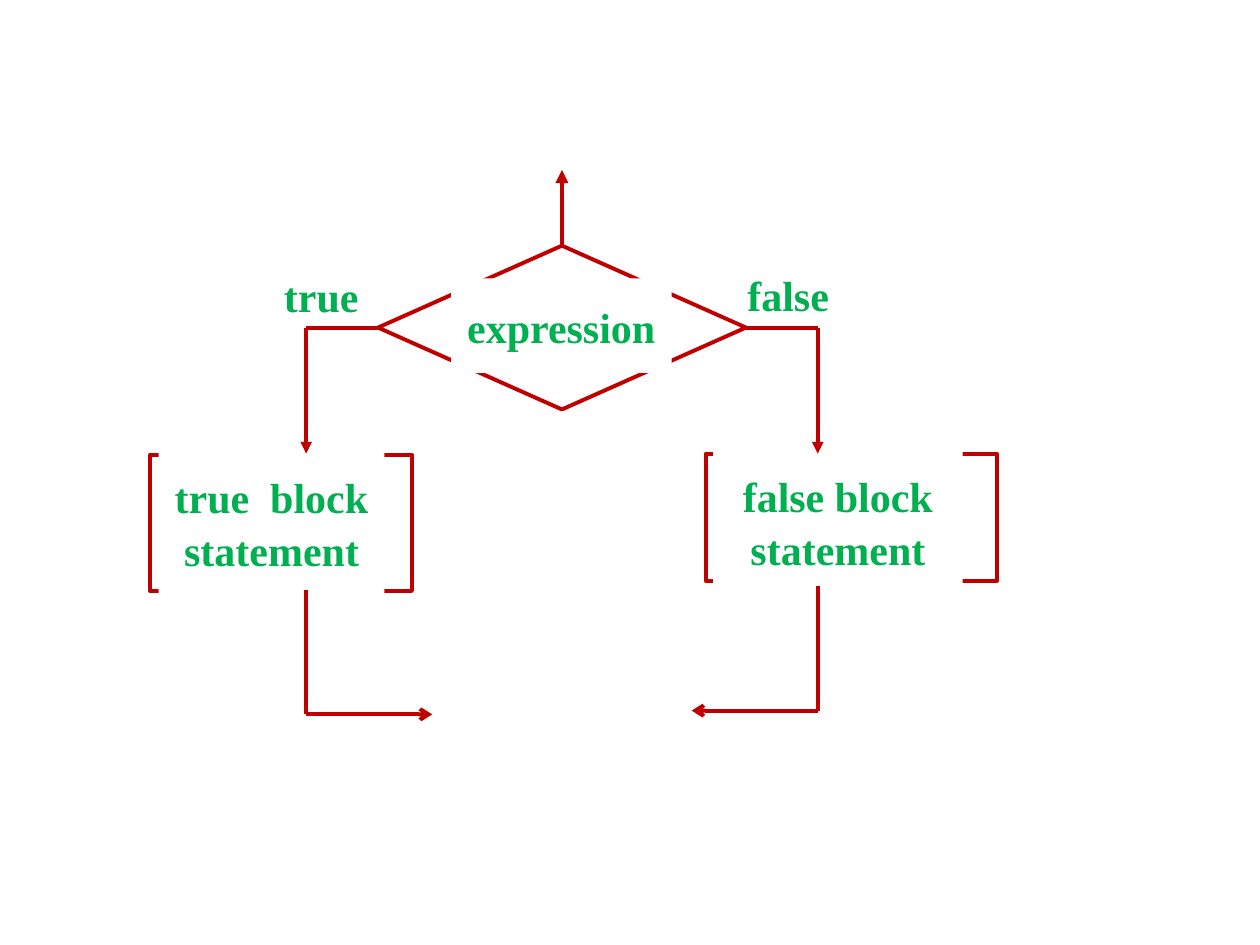
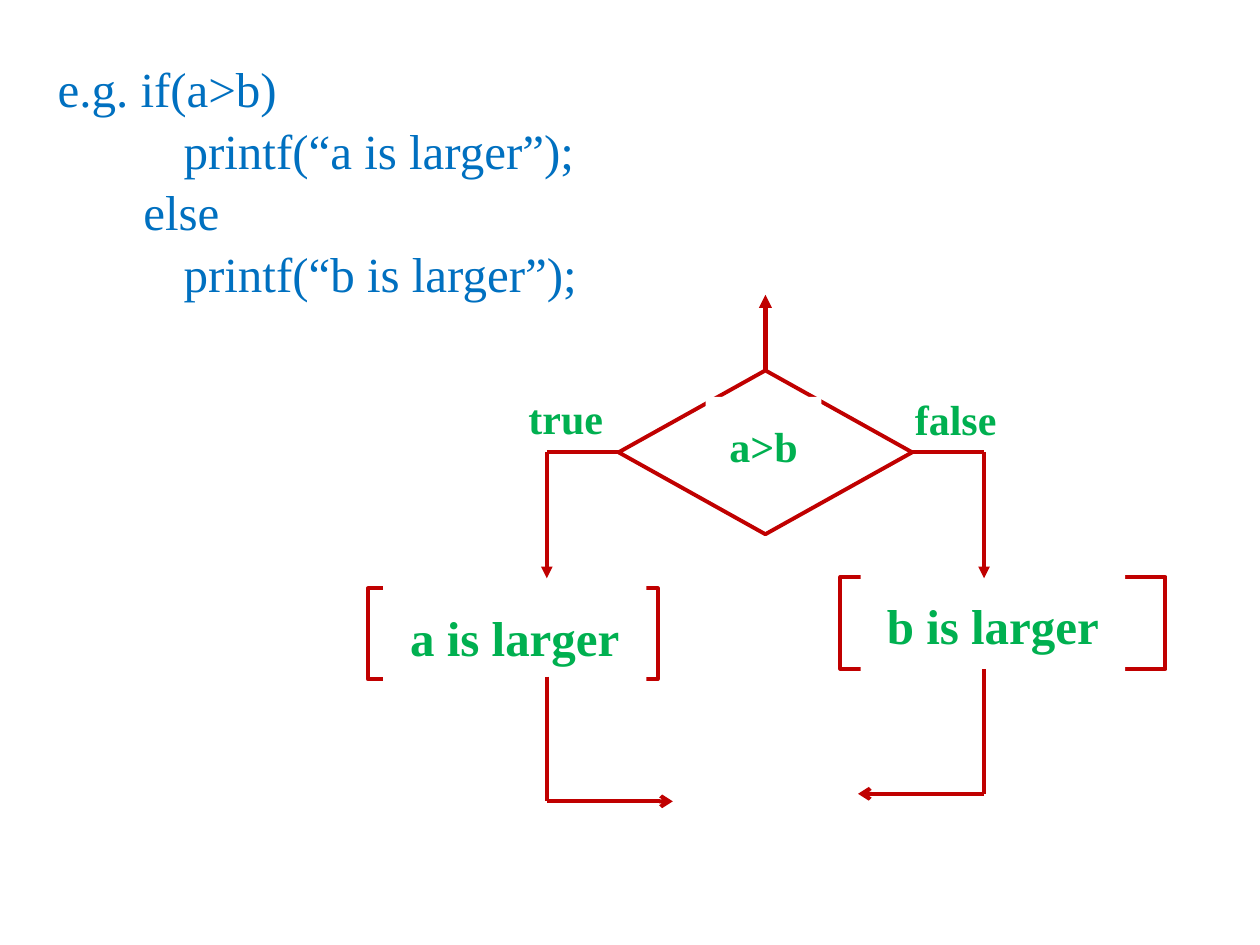
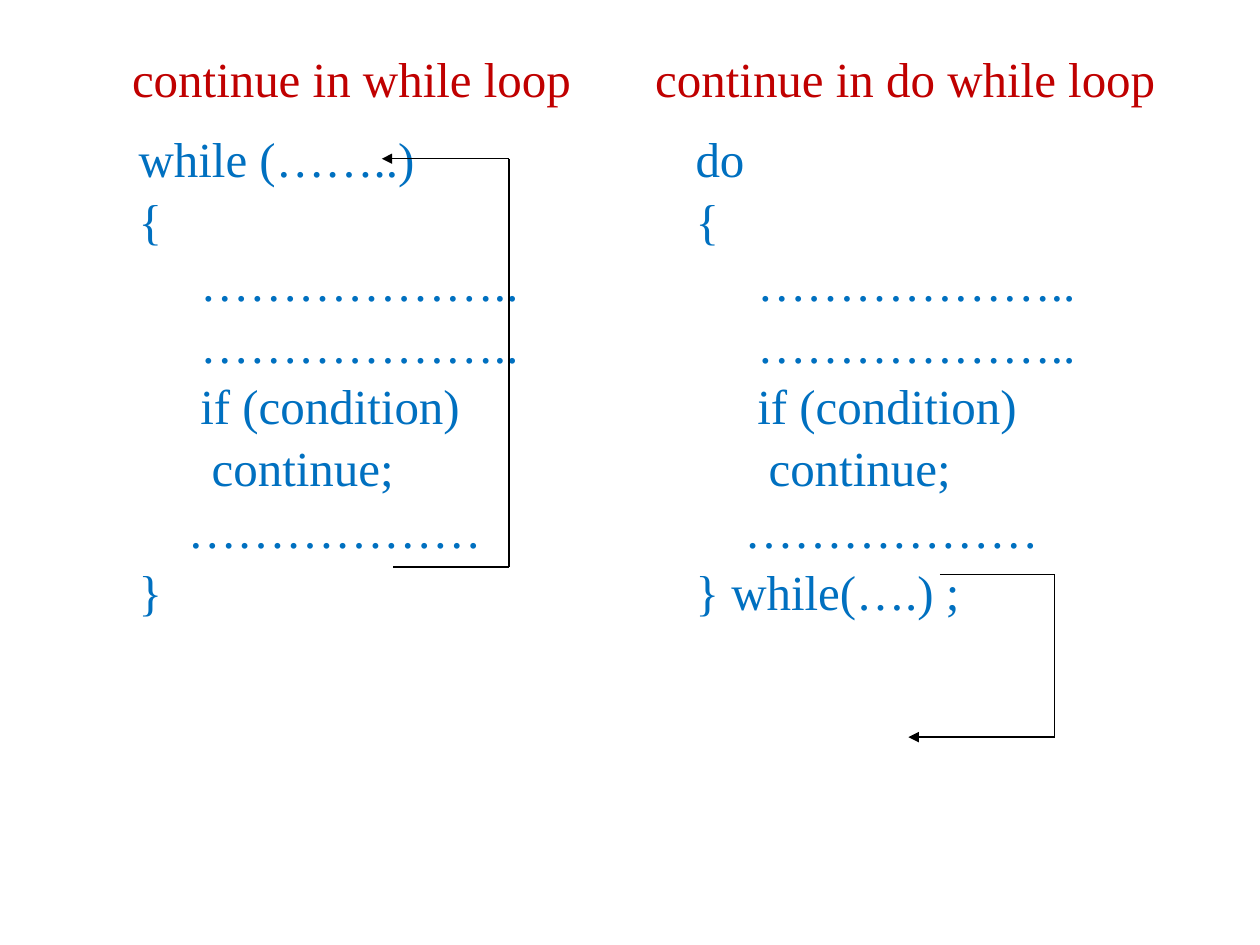
from lxml.etree import SubElement
from pptx import Presentation
from pptx.dml.color import RGBColor
from pptx.enum.shapes import MSO_CONNECTOR as Connector, MSO_SHAPE as Shape
from pptx.enum.text import MSO_ANCHOR as Anchor, MSO_AUTO_SIZE as AutoSize, PP_ALIGN as Align
from pptx.oxml.ns import qn
from pptx.util import Inches, Pt

COLUMNS, ROWS = 100, 75
FONT = "Times New Roman"
RED, GREEN, BLUE, BLACK, WHITE = "C00000", "00B050", "0070C0", "000000", "FFFFFF"
BLANK, COMPARISON = 6, 4
STEP = 10
SIDE_GAP = 5.7


def color(value):
    return RGBColor.from_string(value)


def write(frame, lines, size=24, fill=GREEN, bold=False, align=Align.CENTER,
          anchor=Anchor.MIDDLE, wrap=True, left_inset=0.1):
    frame.word_wrap = wrap
    frame.auto_size = AutoSize.NONE
    frame.vertical_anchor = anchor
    frame.margin_left, frame.margin_right = Inches(left_inset), Inches(0.1)
    frame.margin_top = frame.margin_bottom = Inches(0.05)
    for number, line in enumerate(lines):
        indent, words = line if isinstance(line, tuple) else (0, line)
        paragraph = frame.add_paragraph() if number else frame.paragraphs[0]
        paragraph.alignment = align
        paragraph.line_spacing = 1.05
        paragraph.space_before = paragraph.space_after = Pt(0)
        properties = paragraph._p.get_or_add_pPr()
        properties.set("marL", str(Inches(indent)))
        properties.set("indent", "0")
        SubElement(properties, qn("a:buNone"))
        run = paragraph.add_run()
        run.text = words
        run.font.name, run.font.size, run.font.bold = FONT, Pt(size), bold
        run.font.color.rgb = color(fill)


class Deck:
    """Holds the deck's style and current slide, and draws on a 100 by 75 grid."""

    def __init__(self):
        self.show = Presentation()
        self.show.slide_width, self.show.slide_height = Inches(10), Inches(7.5)
        self.slide = None

    def new_slide(self, layout=BLANK):
        self.slide = self.show.slides.add_slide(self.show.slide_layouts[layout])

    def place(self, *lengths):
        scales = (self.show.slide_width / COLUMNS, self.show.slide_height / ROWS)
        return [round(length * scales[i % 2]) for i, length in enumerate(lengths)]

    def label(self, area, lines, **style):
        write(self.slide.shapes.add_textbox(*self.place(*area)).text_frame, lines, **style)

    def box(self, area, kind=Shape.RECTANGLE, outline=None):
        box = self.slide.shapes.add_shape(kind, *self.place(*area))
        box.shadow.inherit = False
        box.fill.solid()
        box.fill.fore_color.rgb = color(WHITE)
        if outline:
            box.line.color.rgb = color(outline)
            box.line.width = Pt(2.25)
        else:
            box.line.fill.background()
        return box

    def captioned(self, frame_area, caption_area, caption, size=24, kind=Shape.RECTANGLE):
        frame = self.box(frame_area, kind, RED)
        write(self.box(caption_area).text_frame, [caption], size=size, bold=True)
        return frame

    def route(self, points, head, stroke=RED, width=2.25, origin=None):
        for start, end in zip(points, points[1:]):
            leg = self.slide.shapes.add_connector(
                Connector.STRAIGHT, *self.place(*start, *end))
            if origin and start == points[0]:
                leg.begin_connect(*origin)
            leg.line.color.rgb = color(stroke)
            leg.line.width = Pt(width)
            SubElement(leg._element.spPr, qn("a:effectLst"))
        SubElement(leg.line._get_or_add_ln(), qn("a:tailEnd"), type=head)

    def placeholder(self, index, area, lines, **style):
        holder = self.slide.placeholders[index]
        holder.left, holder.top, holder.width, holder.height = self.place(*area)
        write(holder.text_frame, lines, size=28, **style)

    def drop_title(self):
        title = self.slide.shapes.title._element
        title.getparent().remove(title)

    def decision(self, diamond, question_area, question, branches, size=24):
        left, top, width, height = diamond
        middle, center = top + height / 2, left + width / 2
        test = self.captioned(diamond, question_area, question, kind=Shape.DIAMOND)
        self.route([(center, top), (center, top - 6)], "triangle", width=2.5,
                   origin=(test, 0))
        sides = ((left, -1, 1), (left + width, 1, 3))
        for (corner, outward, site), branch in zip(sides, branches):
            name, name_area, block, caption_area, caption, exit_top = branch
            self.label(name_area, [name], bold=True, wrap=False)
            self.captioned(block, caption_area, caption, size)
            turn = corner + outward * SIDE_GAP
            self.route([(corner, middle), (turn, middle), (turn, middle + STEP)],
                       "triangle", origin=(test, site))
            exit_end = exit_top + STEP - 0.1
            self.route([(turn, exit_top), (turn, exit_end),
                        (turn - outward * STEP, exit_end)], "arrow")


def if_else_flow(deck):
    deck.new_slide()
    deck.decision(
        (30, 19.5, 29.2, 13), (35.8, 22.1, 17.5, 7.5), "expression",
        [("true", (20.6, 21.3, 9.8, 4.2), (11.9, 36.1, 20.8, 10.8),
          (12.6, 34.4, 17.9, 14.1), "true  block statement", 46.8),
         ("false", (57, 21.2, 11.1, 4.2), (56, 36, 23.1, 10.1),
          (56.6, 34.3, 19.8, 14.1), "false block statement", 46.5)])


def larger_number_example(deck):
    deck.new_slide()
    deck.decision(
        (49.1, 29.4, 23.3, 13), (56, 31.5, 9.2, 7.5), "a>b",
        [("true", (40.8, 29.3, 8.2, 7.5), (29.2, 46.7, 23, 7.2),
          (30.4, 46.1, 20.9, 8.6), "a is larger", 53.7),
         ("false", (70.3, 31, 11.1, 4.2), (66.7, 45.8, 25.8, 7.3),
          (68.3, 45.2, 21, 8.6), "b is larger", 53.1)], size=28)
    deck.label((3.6, 3.9, 50, 16.4),
               ["e.g. if(a>b)", (1, "printf(“a is larger”);"),
                (0.68, "else"), (1, "printf(“b is larger”);")],
               size=28, fill=BLUE, align=Align.LEFT, anchor=Anchor.TOP)


def continue_in_loops(deck):
    deck.new_slide(COMPARISON)
    deck.drop_title()
    loop_body = ["{", (0.49, "……………….."), (0.49, "……………….."),
                 (0.49, "if (condition)"), (0.58, "continue;"), (0.39, "………………")]
    loops = [("continue in while loop", 0.1, "while (……..)", "}"),
             ("continue in do while loop", 0.05, "do", "} while(….) ;")]
    for number, (heading, inset, opening, closing) in enumerate(loops):
        shift = number * 44.2
        deck.placeholder(1 + 2 * number, (5 + shift, 3.8, 45.8, 5.2), [heading],
                         fill=RED, anchor=Anchor.BOTTOM, left_inset=inset)
        deck.placeholder(2 + 2 * number, (10 + shift, 9.5, 40.8, 48.8),
                         [opening, *loop_body, closing],
                         fill=BLUE, align=Align.LEFT, anchor=Anchor.TOP)
    back_to_test = [(31.2, 45), (40.4, 45), (40.4, 12.6), (30.3, 12.6)]
    on_to_test = [(74.6, 45.6), (83.7, 45.6), (83.7, 58.5), (72.1, 58.5)]
    for jump in (back_to_test, on_to_test):
        deck.route(jump, "triangle", stroke=BLACK, width=0.75)


def main():
    deck = Deck()
    if_else_flow(deck)
    larger_number_example(deck)
    continue_in_loops(deck)
    deck.show.save("out.pptx")


if __name__ == "__main__":
    main()
